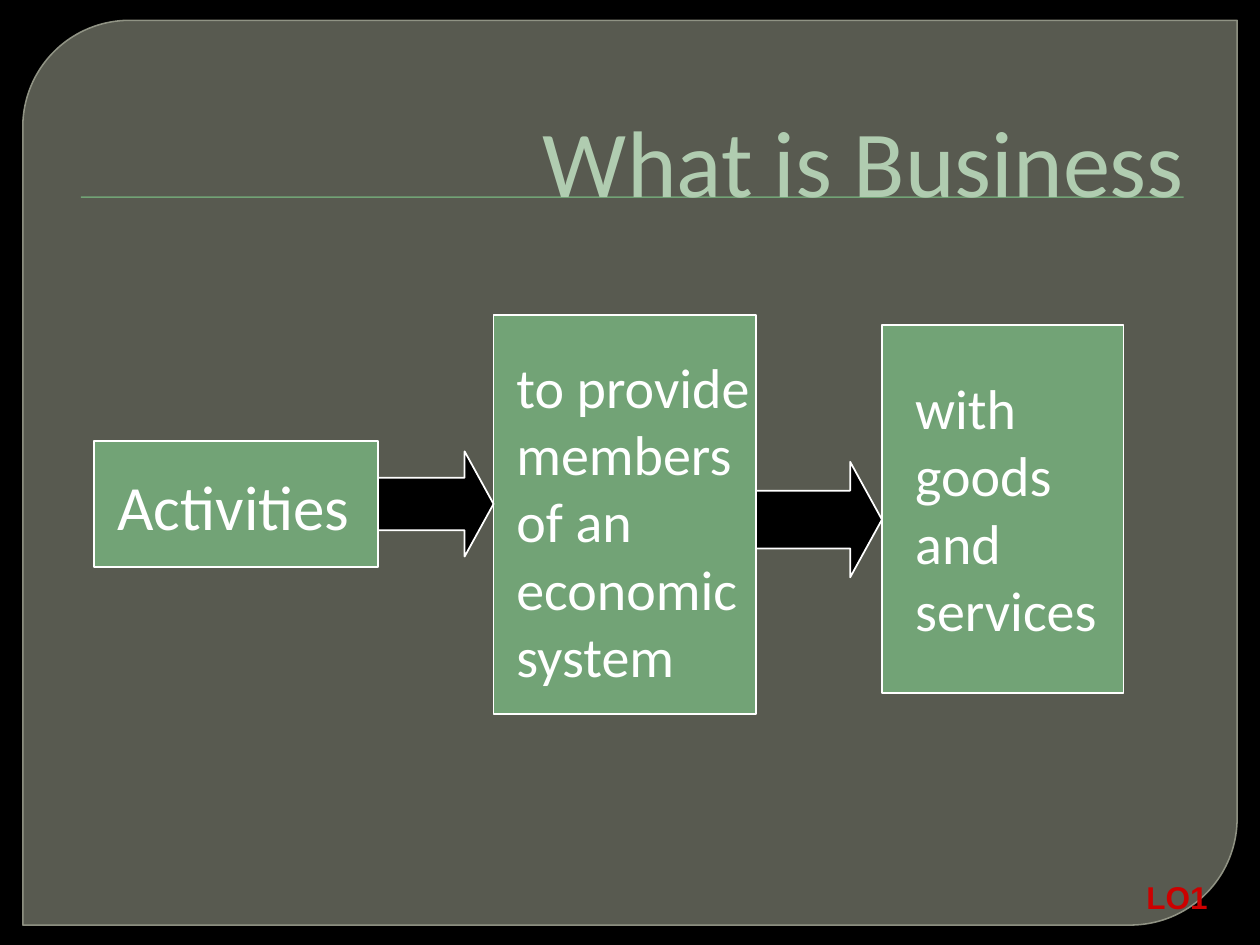
from dataclasses import dataclass

import pptx
import pptx.dml.color
import pptx.enum.shapes
import pptx.enum.text
import pptx.oxml
import pptx.oxml.ns
import pptx.util

Cm = pptx.util.Cm
Pt = pptx.util.Pt
RGBColor = pptx.dml.color.RGBColor
ShapeType = pptx.enum.shapes.MSO_SHAPE
Align = pptx.enum.text.PP_ALIGN
Anchor = pptx.enum.text.MSO_ANCHOR

BLACK = RGBColor(0x00, 0x00, 0x00)
WHITE = RGBColor(0xFF, 0xFF, 0xFF)
GREEN = RGBColor(0x72, 0xA3, 0x76)
PALE_GREEN = RGBColor(0xB0, 0xCC, 0xB0)
PANEL_GREY = RGBColor(0x88, 0x8B, 0x7B)
PANEL_EDGE = RGBColor(0x9D, 0xA0, 0x90)
RED = RGBColor(0xCC, 0x00, 0x00)


@dataclass(frozen=True)
class Box:
    left: float
    top: float
    width: float
    height: float

    def lengths(self) -> tuple:
        return Cm(self.left), Cm(self.top), Cm(self.width), Cm(self.height)


@dataclass(frozen=True)
class Step:
    text: str
    size: int
    card: Box
    label: Box


STEPS = (
    Step("Activities", 36, Box(1.9, 8.89, 5.72, 2.54), Box(2.12, 9.31, 5.72, 1.78)),
    Step("to provide members of an economic system", 32,
         Box(9.95, 6.35, 5.29, 8.04), Box(10.16, 6.98, 5.6, 7.09)),
    Step("with goods and services", 32,
         Box(17.78, 6.56, 4.87, 7.41), Box(18.2, 7.41, 4.45, 5.72)),
)
ARROWS = (Box(7.62, 9.1, 2.33, 2.12), Box(15.24, 9.31, 2.54, 2.33))


def set_opacity(fill_format, percent: int) -> None:
    color = fill_format._xPr.find(".//" + pptx.oxml.ns.qn("a:srgbClr"))
    alpha = pptx.oxml.parse_xml(
        f'<a:alpha {pptx.oxml.ns.nsdecls("a")} val="{percent * 1000}"/>')
    color.append(alpha)


def add_block(slide, kind, box: Box, fill: RGBColor, line=None, line_width=1.0,
              adjustments=()):
    shape = slide.shapes.add_shape(kind, *box.lengths())
    shape.shadow.inherit = False
    shape.fill.solid()
    shape.fill.fore_color.rgb = fill
    if line is None:
        shape.line.fill.background()
    else:
        shape.line.color.rgb = line
        shape.line.width = Pt(line_width)
    for index, value in enumerate(adjustments):
        shape.adjustments[index] = value
    return shape


def write_text(shape, text: str, *, size: int, color: RGBColor, font="Calibri",
               bold=False, align=Align.LEFT, anchor=Anchor.TOP) -> None:
    frame = shape.text_frame
    frame.word_wrap = True
    frame.auto_size = pptx.enum.text.MSO_AUTO_SIZE.NONE
    frame.vertical_anchor = anchor
    frame.text = text
    paragraph = frame.paragraphs[0]
    paragraph.alignment = align
    paragraph.font.name = font
    paragraph.font.size = Pt(size)
    paragraph.font.bold = bold
    paragraph.font.color.rgb = color


def add_label(slide, text: str, box: Box, **text_format) -> None:
    write_text(slide.shapes.add_textbox(*box.lengths()), text, **text_format)


def add_backdrop(slide) -> None:
    slide.background.fill.solid()
    slide.background.fill.fore_color.rgb = BLACK
    panel = add_block(slide, ShapeType.ROUND_2_DIAG_RECTANGLE,
                      Box(0.46, 0.41, 24.48, 18.24), PANEL_GREY, PANEL_EDGE, 0.87,
                      (0.118, 0))
    set_opacity(panel.fill, 65)
    set_opacity(panel.line.fill, 88)
    add_block(slide, ShapeType.RECTANGLE, Box(1.63, 3.96, 22.23, 0.03), GREEN)


def place_title(slide, text: str) -> None:
    title = slide.shapes.title
    title.left, title.top, title.width, title.height = Box(1.27, 1.09, 22.86, 3.28).lengths()
    write_text(title, text, size=54, color=PALE_GREEN, align=Align.RIGHT,
               anchor=Anchor.BOTTOM)
    title.text_frame.margin_bottom = 0
    title.element.getparent().append(title.element)


def main() -> None:
    presentation = pptx.Presentation()
    presentation.slide_width, presentation.slide_height = Cm(25.4), Cm(19.05)
    slide = presentation.slides.add_slide(presentation.slide_layouts[5])
    add_backdrop(slide)
    place_title(slide, "What is Business")
    for step in STEPS:
        add_block(slide, ShapeType.RECTANGLE, step.card, GREEN, WHITE)
        add_label(slide, step.text, step.label, size=step.size, color=WHITE)
    for arrow in ARROWS:
        add_block(slide, ShapeType.RIGHT_ARROW, arrow, BLACK, WHITE,
                  adjustments=(0.5, 0.275))
    add_label(slide, "LO1", Box(22.86, 17.58, 2.12, 1.02), size=18, color=RED,
              font="Arial", bold=True)
    presentation.save("out.pptx")


if __name__ == "__main__":
    main()
